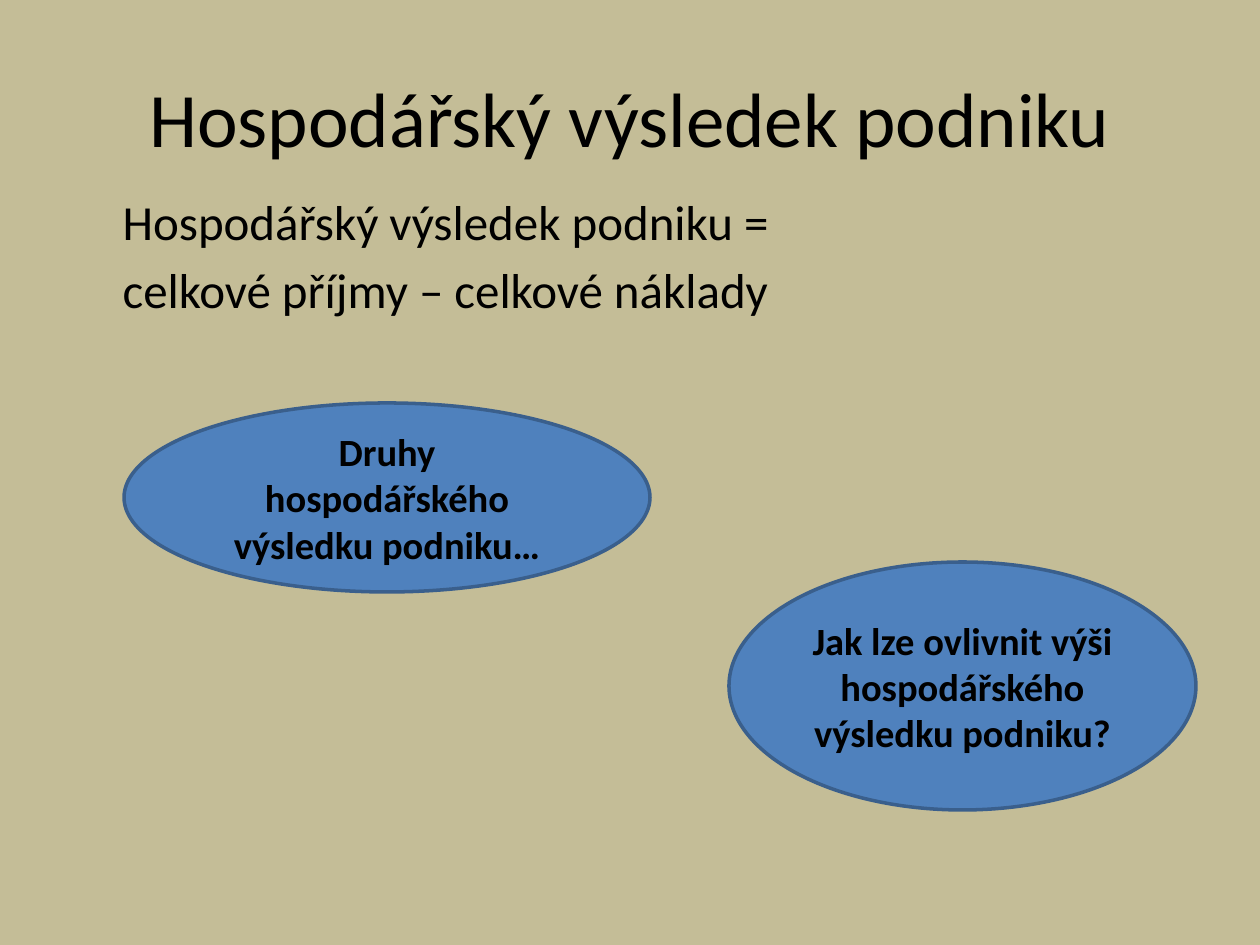
from pptx import Presentation
from pptx import util as u
from pptx.dml.color import RGBColor
from pptx.enum import shapes, text
from pptx.oxml.ns import qn
from lxml import etree

PX = u.Inches(1) / 126
HUES = {"back": "C4BD97", "ink": "000000", "fill": "4F81BD", "edge": "3A5F8C"}
TITLE = ("Hospodářský výsledek podniku", (63, 38, 1134, 157))
BODY = (["Hospodářský výsledek podniku =", "celkové příjmy – celkové náklady"],
        (63, 185, 1134, 659))
OVALS = [
    ("Druhy hospodářského výsledku podniku…", (124, 403, 526, 189)),
    ("Jak lze ovlivnit výši hospodářského výsledku podniku?", (729, 562, 467, 248)),
]
FONTS = {
    "title": {"name": "Calibri", "size": u.Pt(44)},
    "body": {"name": "Calibri", "size": u.Pt(28)},
    "oval": {"name": "Calibri", "size": u.Pt(22), "bold": True},
}


def emu(px):
    return u.Emu(round(px * PX))


def hue(key):
    return RGBColor.from_string(HUES[key])


def place(shape, box):
    for side, px in zip(("left", "top", "width", "height"), box):
        setattr(shape, side, emu(px))


def write(shape, lines, kind, align):
    frame = shape.text_frame
    frame.word_wrap = True
    frame.text = "\n".join(lines)
    for para in frame.paragraphs:
        para.alignment = align
        font = para.runs[0].font
        for key, val in FONTS[kind].items():
            setattr(font, key, val)
        font.color.rgb = hue("ink")


def indent(para, px):
    props = para._p.get_or_add_pPr()
    for key, val in {"marL": emu(px), "indent": 0}.items():
        props.set(key, str(val))
    etree.SubElement(props, qn("a:buNone"))


def oval(slide, line, box):
    shape = slide.shapes.add_shape(
        shapes.MSO_SHAPE.OVAL, *(emu(px) for px in box))
    shape.shadow.inherit = False
    shape.fill.solid()
    shape.fill.fore_color.rgb = hue("fill")
    shape.line.color.rgb = hue("edge")
    shape.line.width = u.Pt(2)
    shape.text_frame.vertical_anchor = text.MSO_ANCHOR.MIDDLE
    write(shape, [line], "oval", text.PP_ALIGN.CENTER)


def main():
    deck = Presentation()
    deck.slide_width, deck.slide_height = emu(1260), emu(945)
    slide = deck.slides.add_slide(deck.slide_layouts[1])
    back = slide.background.fill
    back.solid()
    back.fore_color.rgb = hue("back")

    head, body = slide.placeholders
    line, box = TITLE
    place(head, box)
    write(head, [line], "title", text.PP_ALIGN.CENTER)
    lines, box = BODY
    place(body, box)
    write(body, lines, "body", text.PP_ALIGN.LEFT)
    for para in body.text_frame.paragraphs:
        indent(para, 47)
    for line, box in OVALS:
        oval(slide, line, box)
    deck.save("out.pptx")


if __name__ == "__main__":
    main()
